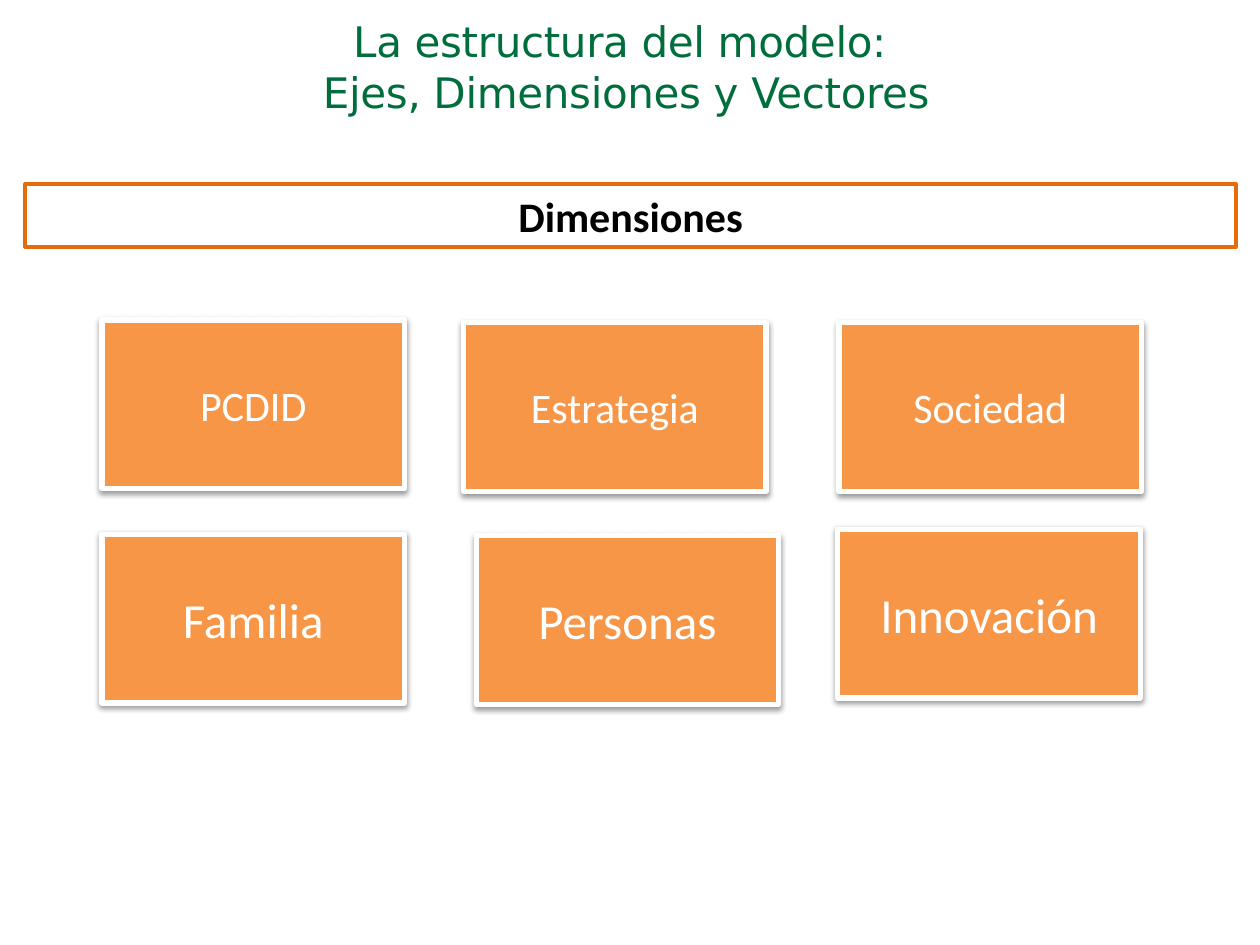
from collections import namedtuple

from lxml.etree import SubElement
from pptx import Presentation
from pptx.dml.color import RGBColor
from pptx.enum.shapes import MSO_SHAPE
from pptx.enum.text import MSO_ANCHOR, MSO_AUTO_SIZE, PP_ALIGN
from pptx.oxml.ns import qn
from pptx.util import Inches, Pt

Box = namedtuple("Box", "left top width height")

COLUMNS, ROWS = 100, 75
CELL = Inches(0.1)
WHITE = RGBColor(0xFF, 0xFF, 0xFF)
BLACK = RGBColor(0x00, 0x00, 0x00)
ORANGE = RGBColor(0xF7, 0x96, 0x46)
DARK_ORANGE = RGBColor(0xE4, 0x6C, 0x0A)
GREEN = RGBColor(0x00, 0x6D, 0x3C)

TILE_WIDTH, TILE_HEIGHT = 24, 13.4
TILE_ROWS = [
    (24, [("PCDID", 0, 0), ("Estrategia", 28.7, 0.2), ("Sociedad", 58.5, 0.2)]),
    (28, [("Familia", 0, 17), ("Personas", 29.7, 17.1), ("Innovación", 58.4, 16.6)]),
]


def to_lengths(box):
    return [round(value * CELL) for value in box]


def write_text(shape, text, size=24, color=BLACK, font="Calibri", bold=False, spacing=None):
    frame = shape.text_frame
    frame.word_wrap = True
    frame.vertical_anchor = MSO_ANCHOR.MIDDLE
    para = frame.paragraphs[0]
    para.text = text
    para.alignment = PP_ALIGN.CENTER
    for span in para.runs:
        span.font.name = font
        span.font.size = Pt(size)
        span.font.bold = bold
        span.font.color.rgb = color
        if spacing is not None:
            span.font._element.set("spc", str(round(spacing * 100)))
    return para


def add_rectangle(page, box, fill, line, line_width):
    shape = page.shapes.add_shape(MSO_SHAPE.RECTANGLE, *to_lengths(box))
    shape.shadow.inherit = False
    shape.fill.solid()
    shape.fill.fore_color.rgb = fill
    shape.line.color.rgb = line
    shape.line.width = Pt(line_width)
    return shape


def add_soft_shadow(shape):
    effects = shape._element.spPr.find(qn("a:effectLst"))
    shadow = SubElement(effects, qn("a:outerShdw"), blurRad=str(Pt(3.1)),
                        dist=str(Pt(1.6)), dir="5400000", rotWithShape="0")
    color = SubElement(shadow, qn("a:srgbClr"), val=str(BLACK))
    SubElement(color, qn("a:alpha"), val="38000")


def add_title(page, box):
    title = page.shapes.add_textbox(*to_lengths(box))
    frame = title.text_frame
    frame.margin_left = frame.margin_right = frame.margin_bottom = 0
    frame.margin_top = Inches(0.22)
    para = write_text(title, "La estructura del modelo: \vEjes, Dimensiones y Vectores",
                      color=GREEN, font="DejaVu Sans", spacing=-0.2)
    frame.auto_size = MSO_AUTO_SIZE.SHAPE_TO_FIT_TEXT
    properties = para._p.get_or_add_pPr()
    properties.set("marL", str(Inches(0.5)))
    properties.set("indent", "0")


def add_banner(page, box):
    banner = add_rectangle(page, box, WHITE, DARK_ORANGE, 2)
    write_text(banner, "Dimensiones", bold=True)


def add_dimensions(page, box):
    for size, tiles in TILE_ROWS:
        for label, across, down in tiles:
            place = Box(box.left + across, box.top + down, TILE_WIDTH, TILE_HEIGHT)
            tile = add_rectangle(page, place, ORANGE, WHITE, 3)
            add_soft_shadow(tile)
            write_text(tile, label, size=size, color=WHITE)


def main():
    deck = Presentation()
    deck.slide_width = COLUMNS * CELL
    deck.slide_height = ROWS * CELL
    page = deck.slides.add_slide(deck.slide_layouts[6])
    add_dimensions(page, Box(8.1, 25.4, 82.5, 30.5))
    add_banner(page, Box(2, 14.6, 96.1, 5))
    add_title(page, Box(16.9, -1, 60.6, 10.3))
    deck.save("out.pptx")


if __name__ == "__main__":
    main()
